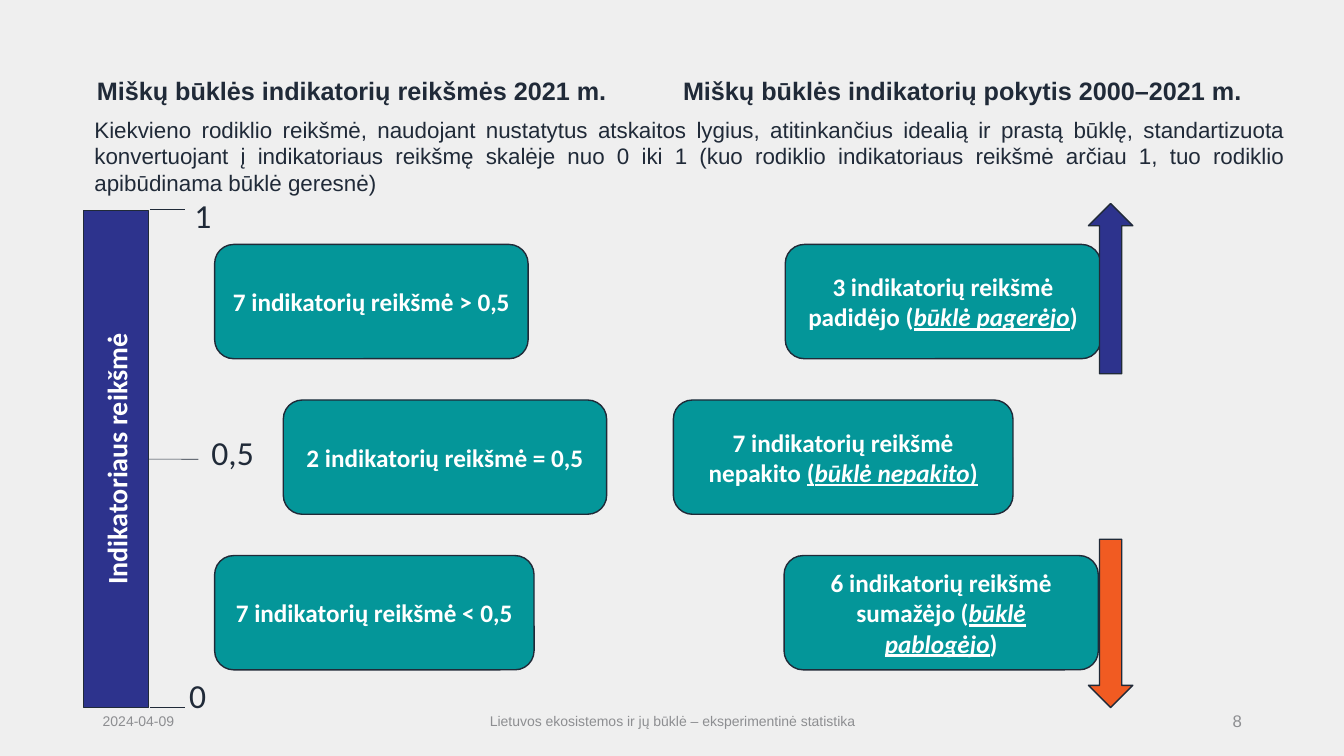
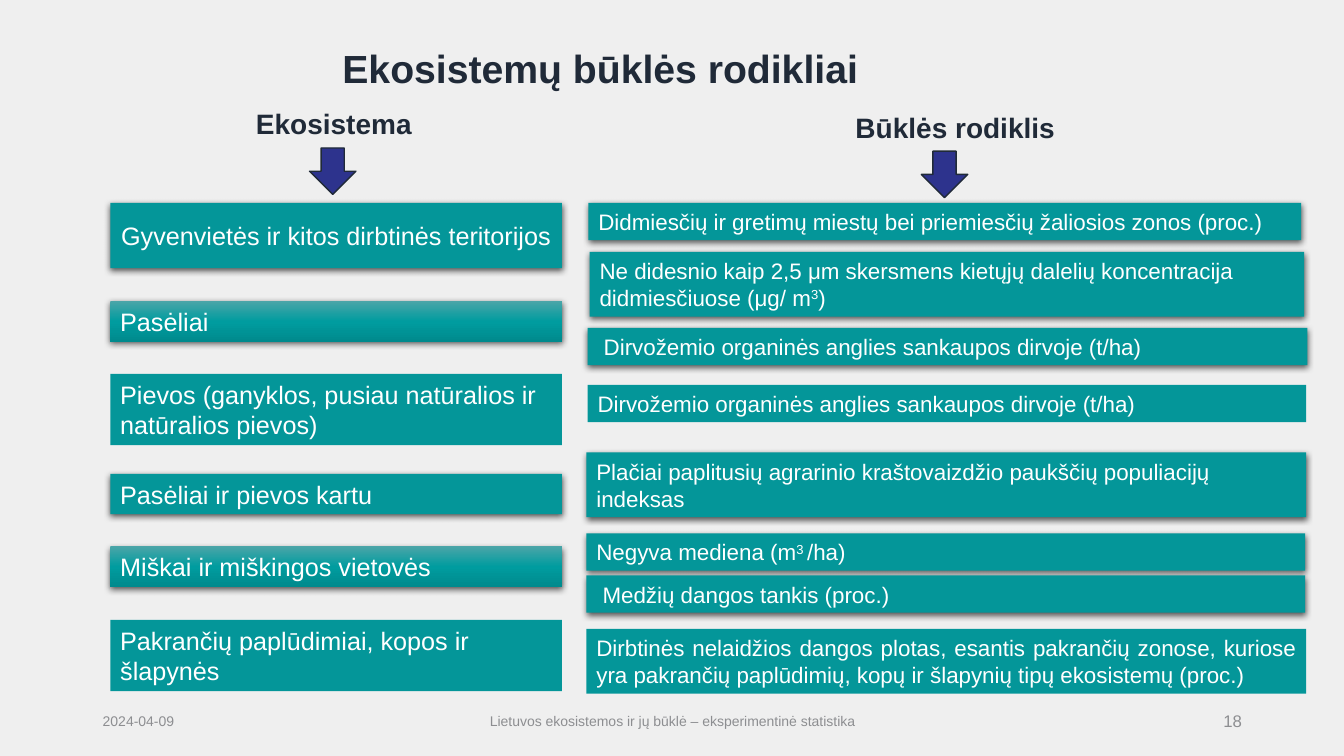
"""Build two slides on ecosystem condition indicators."""
from copy import deepcopy

from lxml.etree import SubElement
from pptx import Presentation
from pptx.dml.color import RGBColor
from pptx.enum.shapes import MSO_CONNECTOR, MSO_SHAPE as SHAPE
from pptx.enum.text import MSO_ANCHOR as ANCHOR, PP_ALIGN as ALIGN
from pptx.oxml.ns import qn
from pptx.util import Cm, Pt

PAPER = RGBColor(0xEF, 0xEF, 0xEF)
INK = RGBColor(0x20, 0x2A, 0x38)
GREY = RGBColor(0x8D, 0x8E, 0x91)
WHITE = RGBColor(0xFF, 0xFF, 0xFF)
TEAL = RGBColor(0x04, 0x96, 0x99)
NAVY = RGBColor(0x2D, 0x33, 0x8D)
ORANGE = RGBColor(0xF1, 0x5B, 0x22)
GRADIENT = (RGBColor(0x4B, 0xA5, 0xA8), RGBColor(0x00, 0x9C, 0x9F), RGBColor(0x00, 0x8A, 0x8D))

FOOTER = dict(name="Arial", size=Pt(10))
NUMBER = dict(name="Arial", size=Pt(12))
TITLE = dict(name="Arial", size=Pt(28), bold=True)
SUBTITLE = dict(name="Arial", size=Pt(20), bold=True)
HEADING = dict(name="Arial", size=Pt(18), bold=True)
BODY = dict(name="Arial", size=Pt(16))
ECOSYSTEM = dict(name="Arial", size=Pt(18))
SCALE = dict(name="Calibri", size=Pt(24))
AXIS = dict(name="Calibri", size=Pt(20), bold=True)
CARD = dict(name="Calibri", size=Pt(18), bold=True)
UNDER = dict(underline=True)
STRESS = dict(italic=True, underline=True)
SUPER = dict(baseline="30000")


class Deck:
    """Holds the shared style and the current slide."""

    def __init__(self):
        self.prs = Presentation()
        self.prs.slide_width, self.prs.slide_height = Cm(33.87), Cm(19.05)
        self.s = None

    def slide(self, number):
        self.s = self.prs.slides.add_slide(self.prs.slide_layouts[6])
        self.s.background.fill.solid()
        self.s.background.fill.fore_color.rgb = PAPER
        footers = (
            (2.34, 7.62, "2024-04-09", FOOTER, ALIGN.LEFT),
            (11.23, 11.43, "Lietuvos ekosistemos ir jų būklė – eksperimentinė statistika", FOOTER, ALIGN.CENTER),
            (23.93, 7.62, number, NUMBER, ALIGN.RIGHT),
        )
        for x, w, words, fmt, align in footers:
            self.text((x, 17.65, w, 1.02), words, fmt, GREY, align, ANCHOR.MIDDLE)

    def put_text(self, sp, words, fmt, color, align, anchor, spacing=None, wrap=True):
        tf = sp.text_frame
        tf.word_wrap, tf.vertical_anchor = wrap, anchor
        p = tf.paragraphs[0]
        p.alignment, p.line_spacing = align, spacing
        for part, extra in [(words, {})] if isinstance(words, str) else words:
            r = p.add_run()
            r.text = part
            r.font.color.rgb = color
            for key, value in {**fmt, **extra}.items():
                if key == "baseline":
                    r.font._element.set(key, value)
                else:
                    setattr(r.font, key, value)

    def text(self, box, words, fmt, color=INK, align=ALIGN.LEFT, anchor=ANCHOR.TOP, **layout):
        sp = self.s.shapes.add_textbox(*map(Cm, box))
        self.put_text(sp, words, fmt, color, align, anchor, **layout)

    def shape(self, kind, box, fill, outlined=True):
        sp = self.s.shapes.add_shape(kind, *map(Cm, box))
        sp.shadow.inherit = False
        sp.fill.solid()
        sp.fill.fore_color.rgb = fill
        if outlined:
            sp.line.color.rgb, sp.line.width = INK, Pt(1)
        else:
            sp.line.fill.background()
        return sp

    def bar(self, box, words):
        sp = self.shape(SHAPE.RECTANGLE, box, NAVY)
        self.put_text(sp, words, AXIS, WHITE, ALIGN.CENTER, ANCHOR.MIDDLE)
        sp.text_frame._txBody.bodyPr.set("vert", "vert270")
        return sp

    def card(self, box, words):
        sp = self.shape(SHAPE.ROUNDED_RECTANGLE, box, TEAL)
        self.put_text(sp, words, CARD, WHITE, ALIGN.CENTER, ANCHOR.MIDDLE)

    def band(self, box, words, fmt, align=ALIGN.LEFT, shadow=True, gradient=False):
        sp = self.shape(SHAPE.RECTANGLE, box, TEAL, outlined=False)
        self.put_text(sp, words, fmt, WHITE, align, ANCHOR.MIDDLE)
        if gradient:
            self.shade(sp)
        if shadow:
            self.drop_shadow(sp)

    def shade(self, sp):
        sp.fill.gradient()
        sp.fill.gradient_angle = 270
        stops = next(sp._element.iter(qn("a:gsLst")))
        stops.insert(1, deepcopy(stops[0]))
        for i, (stop, color) in enumerate(zip(sp.fill.gradient_stops, GRADIENT)):
            stop.position, stop.color.rgb = i / 2, color

    def drop_shadow(self, sp):
        effects = sp._element.spPr.find(qn("a:effectLst"))
        outer = SubElement(effects, qn("a:outerShdw"), blurRad=str(Pt(4.5)), dist=str(Pt(1.5)),
                           dir="5400000", algn="ctr", rotWithShape="0")
        color = SubElement(outer, qn("a:srgbClr"), val="000000")
        SubElement(color, qn("a:alpha"), val="63000")

    def tick(self, x1, x2, y, start=None):
        c = self.s.shapes.add_connector(MSO_CONNECTOR.STRAIGHT, Cm(x1), Cm(y), Cm(x2), Cm(y))
        if start is not None:
            c.begin_connect(start, 3)
        c.line.color.rgb, c.line.width = INK, Pt(0.5)
        SubElement(c._element.spPr, qn("a:effectLst"))


def forest_slide(d):
    d.slide("8")
    bar = d.bar((2.11, 5.31, 1.63, 12.52), "Indikatoriaus reikšmė")
    d.tick(3.74, 5, 11.57, bar)
    for y in (5.28, 17.82):
        d.tick(3.78, 4.65, y)
    for x, y, w, words in ((4.65, 4.78, 0.86, "1"), (5.08, 10.77, 1.63, "0,5"), (4.52, 16.87, 0.89, "0")):
        d.text((x, y, w, 1.28), words, SCALE, wrap=False)

    rows = (
        ((5.41, 7.9, "7 indikatorių reikšmė > 0,5"),
         (19.79, 7.95, [("3 indikatorių reikšmė padidėjo (", {}), ("būklė pagerėjo", STRESS), (")", {})])),
        ((7.14, 8.15, "2 indikatorių reikšmė = 0,5"),
         (16.97, 8.56, [("7 indikatorių reikšmė nepakito ", {}), ("(", UNDER),
                        ("būklė nepakito", STRESS), (")", UNDER)])),
        ((5.41, 8.05, "7 indikatorių reikšmė < 0,5"),
         (19.76, 7.92, [("6 indikatorių reikšmė sumažėjo (", {}), ("būklė pablogėjo", STRESS), (")", {})])),
    )
    for i, row in enumerate(rows):
        for x, w, words in row:
            d.card((x, 6.16 + 3.92 * i, w, 2.88), words)

    d.shape(SHAPE.UP_ARROW, (27.43, 5.13, 1.12, 4.29), NAVY)
    d.shape(SHAPE.DOWN_ARROW, (27.43, 13.59, 1.12, 4.24), ORANGE)
    for x, w, words in ((2.11, 13.51, "Miškų būklės indikatorių reikšmės 2021 m."),
                        (16.43, 15.65, "Miškų būklės indikatorių pokytis 2000–2021 m.")):
        d.text((x, 1.78, w, 1.02), words, HEADING, align=ALIGN.CENTER)
    d.text((2.13, 2.79, 30.5, 2.31),
           "Kiekvieno rodiklio reikšmė, naudojant nustatytus atskaitos lygius, atitinkančius idealią ir prastą "
           "būklę, standartizuota konvertuojant į indikatoriaus reikšmę skalėje nuo 0 iki 1 (kuo rodiklio "
           "indikatoriaus reikšmė arčiau 1, tuo rodiklio apibūdinama būklė geresnė)",
           BODY, align=ALIGN.JUSTIFY)


def ecosystem_slide(d):
    d.slide("18")
    d.text((8.38, 0.97, 14.5, 1.63), "Ekosistemų būklės rodikliai", TITLE, anchor=ANCHOR.MIDDLE, spacing=0.9)
    for x, y, w, words, arrow_x in ((6.2, 2.61, 6.38, "Ekosistema", 7.8),
                                    (21.31, 2.69, 8.03, "Būklės rodiklis", 23.22)):
        d.text((x, y, w, 1.12), words, SUBTITLE, anchor=ANCHOR.MIDDLE, spacing=0.9)
        d.shape(SHAPE.DOWN_ARROW, (arrow_x, y + 1.12, 1.17, 1.17), NAVY)

    plain, shaded = dict(shadow=False), dict(gradient=True)
    ecosystems = (
        (5.11, 1.65, "Gyvenvietės ir kitos dirbtinės teritorijos", dict(align=ALIGN.CENTER)),
        (7.59, 1.02, "Pasėliai", shaded),
        (9.42, 1.8, "Pievos (ganyklos, pusiau natūralios ir natūralios pievos)", plain),
        (11.94, 1.02, "Pasėliai ir pievos kartu", {}),
        (13.77, 1.02, "Miškai ir miškingos vietovės", shaded),
        (15.62, 1.8, "Pakrančių paplūdimiai, kopos ir šlapynės", plain),
    )
    for y, h, words, look in ecosystems:
        d.band((2.78, y, 11.38, h), words, ECOSYSTEM, **look)

    one, two = 0.94, 1.63
    indicators = (
        (14.83, 5.11, 17.96, one, "Didmiesčių ir gretimų miestų bei priemiesčių žaliosios zonos (proc.)", {}),
        (14.86, 6.35, 18.01, two,
         [("Ne didesnio kaip 2,5 μm skersmens kietųjų dalelių koncentracija didmiesčiuose (μg/ m", {}),
          ("3", SUPER), (")", {})], {}),
        (14.81, 8.26, 18.14, one, " Dirvožemio organinės anglies sankaupos dirvoje (t/ha)", {}),
        (14.81, 9.7, 18.11, one, "Dirvožemio organinės anglies sankaupos dirvoje (t/ha)", plain),
        (14.78, 11.4, 18.14, two,
         "Plačiai paplitusių agrarinio kraštovaizdžio paukščių populiacijų indeksas", {}),
        (14.78, 13.44, 18.11, one, [("Negyva mediena (m", {}), ("3 ", SUPER), ("/ha)", {})], {}),
        (14.78, 14.5, 18.11, one, " Medžių dangos tankis (proc.)", {}),
        (14.78, 15.85, 18.14, two,
         "Dirbtinės nelaidžios dangos plotas, esantis pakrančių zonose, kuriose yra pakrančių paplūdimių, "
         "kopų ir šlapynių tipų ekosistemų (proc.)", dict(align=ALIGN.JUSTIFY, shadow=False)),
    )
    for x, y, w, h, words, look in indicators:
        d.band((x, y, w, h), words, BODY, **look)


def main():
    d = Deck()
    forest_slide(d)
    ecosystem_slide(d)
    d.prs.save("out.pptx")


if __name__ == "__main__":
    main()
